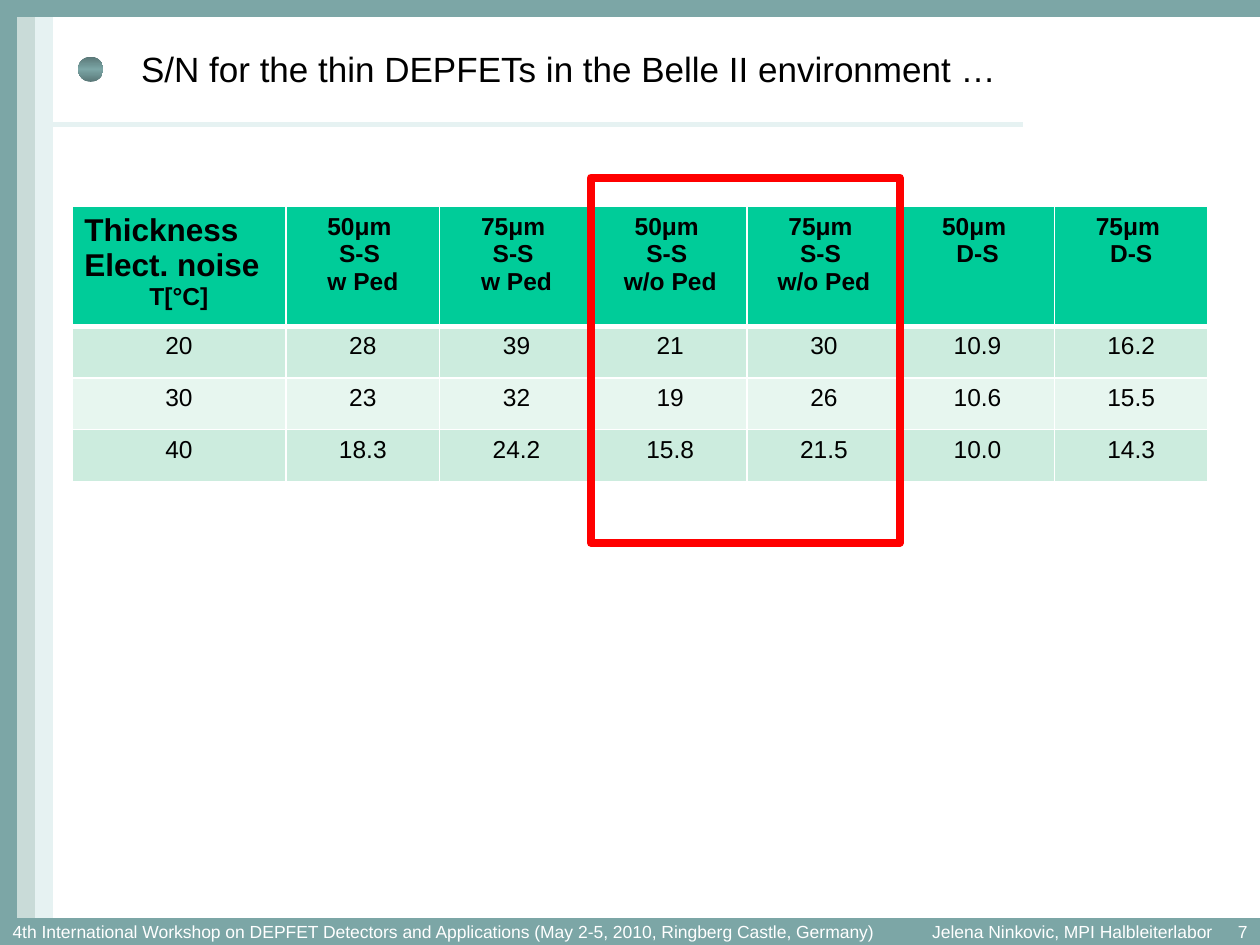
from copy import deepcopy
from typing import NamedTuple

from lxml.etree import SubElement
from pptx import Presentation
from pptx.dml.color import RGBColor
from pptx.enum.shapes import MSO_CONNECTOR, MSO_SHAPE
from pptx.enum.text import MSO_ANCHOR, PP_ALIGN
from pptx.oxml.ns import qn
from pptx.util import Inches, Pt

COLORS = {
    "teal": "7CA6A6", "teal_dark": "597777", "sage": "C9DBD8", "mist": "E6F2F2",
    "header": "00CC99", "band": "CCECDE", "band_light": "E7F6EF",
    "highlight": "FF0000", "ink": "000000", "white": "FFFFFF",
}
FONT = "Arial"
WIDTH, HEIGHT = Inches(10), Inches(7.5)
GRID_COLS, GRID_ROWS = 1000, 750  # placement grid over the whole slide


class Area(NamedTuple):
    """A place on the slide, in grid columns and rows."""
    col: int
    row: int
    cols: int
    rows: int


class Bar(NamedTuple):
    area: Area
    color: str


class Label(NamedTuple):
    area: Area
    text: str
    size: int
    color: str
    align: PP_ALIGN = PP_ALIGN.LEFT
    anchor: MSO_ANCHOR = MSO_ANCHOR.MIDDLE
    insets: tuple = (0, 0, 0, 0)  # left, top, right, bottom in grid units


class Line(NamedTuple):
    text: str
    size: int = 14
    align: PP_ALIGN = PP_ALIGN.CENTER


FRAME_BARS = [
    Bar(Area(13, 0, 15, 729), "sage"),
    Bar(Area(28, 0, 14, 750), "mist"),
    Bar(Area(0, 729, 1000, 24), "teal"),
    Bar(Area(0, 0, 13, 729), "teal"),
    Bar(Area(0, -3, 1000, 16), "teal"),
]
LABELS = [
    Label(Area(42, 21, 850, 67), "S/N for the thin DEPFETs in the Belle II environment …",
          20, "ink", insets=(70, 5, 10, 5)),
    Label(Area(10, 729, 730, 21), "4th International Workshop on DEPFET Detectors and "
          "Applications (May 2-5, 2010, Ringberg Castle, Germany)", 10, "white"),
    Label(Area(708, 729, 254, 21), "Jelena Ninkovic, MPI Halbleiterlabor",
          10, "white", PP_ALIGN.RIGHT),
    Label(Area(900, 726, 100, 24), "7", 10, "white", PP_ALIGN.RIGHT,
          MSO_ANCHOR.TOP, (10, 5, 10, 5)),
]
CORNER = [Line("Thickness", 18, PP_ALIGN.LEFT), Line("Elect. noise", 18, PP_ALIGN.LEFT),
          Line("T[°C]")]
READOUTS = ["S-S \vw Ped", "S-S \vw/o Ped", "D-S"]
SENSORS = [f"{thickness}μm \v{readout}" for readout in READOUTS for thickness in (50, 75)]
NOISE_ROWS = [
    ["20", "28", "39", "21", "30", "10.9", "16.2"],
    ["30", "23", "32", "19", "26", "10.6", "15.5"],
    ["40", "18.3", "24.2", "15.8", "21.5", "10.0", "14.3"],
]
COLUMN_COLS = [170] + [122] * len(SENSORS)
ROW_ROWS = [95] + [41] * len(NOISE_ROWS)
TABLE_AREA = Area(57, 164, sum(COLUMN_COLS), sum(ROW_ROWS))
HIGHLIGHT_AREA = Area(469, 141, 245, 290)


def x(cols: float) -> int:
    return round(WIDTH * cols / GRID_COLS)


def y(rows: float) -> int:
    return round(HEIGHT * rows / GRID_ROWS)


def place(area: Area) -> tuple:
    return x(area.col), y(area.row), x(area.cols), y(area.rows)


def rgb(color: str) -> RGBColor:
    return RGBColor.from_string(COLORS[color])


def add_outlined(slide, kind, area: Area):
    shape = slide.shapes.add_shape(kind, *place(area))
    shape.shadow.inherit = False
    return shape


def draw_bar(slide, bar: Bar) -> None:
    shape = add_outlined(slide, MSO_SHAPE.RECTANGLE, bar.area)
    shape.fill.solid()
    shape.fill.fore_color.rgb = rgb(bar.color)
    shape.line.color.rgb = rgb(bar.color)
    shape.line.width = Pt(0.75)


def draw_rule(slide) -> None:
    rule = slide.shapes.add_connector(MSO_CONNECTOR.STRAIGHT, x(32), y(99), x(812), y(99))
    rule.line.color.rgb = rgb("mist")
    rule.line.width = Pt(3)
    SubElement(rule._element.spPr, qn("a:effectLst"))


def draw_bullet(slide) -> None:
    bullet = add_outlined(slide, MSO_SHAPE.OVAL, Area(62, 45, 20, 20))
    bullet.line.fill.background()
    bullet.fill.gradient()
    bullet.fill.gradient_angle = 90
    stop_list = next(bullet._element.iter(qn("a:gsLst")))
    stop_list.insert(1, deepcopy(stop_list[0]))
    shades = [(0, "teal_dark"), (0.5, "teal"), (1, "teal_dark")]
    for stop, (position, color) in zip(bullet.fill.gradient_stops, shades):
        stop.position = position
        stop.color.rgb = rgb(color)


def add_text(paragraph, text: str, size: int, color: str, bold: bool = False) -> None:
    for index, part in enumerate(text.split("\v")):
        if index:
            paragraph.add_line_break()
        run = paragraph.add_run()
        run.text = part
        run.font.name = FONT
        run.font.size = Pt(size)
        run.font.bold = bold
        run.font.color.rgb = rgb(color)


def draw_label(slide, label: Label) -> None:
    frame = slide.shapes.add_textbox(*place(label.area)).text_frame
    frame.word_wrap = True
    frame.vertical_anchor = label.anchor
    left, top, right, bottom = label.insets
    frame.margin_left, frame.margin_right = x(left), x(right)
    frame.margin_top, frame.margin_bottom = y(top), y(bottom)
    frame.paragraphs[0].alignment = label.align
    add_text(frame.paragraphs[0], label.text, label.size, label.color)


def set_borders(cell, top: float, bottom: float) -> None:
    properties = cell._tc.get_or_add_tcPr()
    for side, points in (("L", 1), ("R", 1), ("T", top), ("B", bottom)):
        border = SubElement(properties, qn(f"a:ln{side}"), w=str(Pt(points)))
        fill = SubElement(border, qn("a:solidFill"))
        SubElement(fill, qn("a:srgbClr"), val=COLORS["white"])


def fill_cell(cell, lines: list[Line], row: int) -> None:
    set_borders(cell, top=3 if row == 1 else 1, bottom=3 if row == 0 else 1)
    cell.fill.solid()
    cell.fill.fore_color.rgb = rgb(
        "header" if row == 0 else "band" if row % 2 else "band_light")
    for index, line in enumerate(lines):
        frame = cell.text_frame
        paragraph = frame.add_paragraph() if index else frame.paragraphs[0]
        paragraph.alignment = line.align
        add_text(paragraph, line.text, line.size, "ink", bold=row == 0)


def draw_noise_table(slide) -> None:
    rows = [[CORNER] + [[Line(sensor)] for sensor in SENSORS]]
    rows += [[[Line(value)] for value in values] for values in NOISE_ROWS]
    table = slide.shapes.add_table(len(rows), len(COLUMN_COLS), *place(TABLE_AREA)).table
    table.first_row = table.horz_banding = False
    for column, cols in zip(table.columns, COLUMN_COLS):
        column.width = x(cols)
    for r, (table_row, height) in enumerate(zip(table.rows, ROW_ROWS)):
        table_row.height = y(height)
        for cell, lines in zip(table_row.cells, rows[r]):
            fill_cell(cell, lines, r)


def draw_highlight(slide) -> None:
    highlight = add_outlined(slide, MSO_SHAPE.RECTANGLE, HIGHLIGHT_AREA)
    highlight.fill.background()
    highlight.line.color.rgb = rgb("highlight")
    highlight.line.width = Pt(4.5)
    SubElement(highlight.line._get_or_add_ln(), qn("a:round"))


def main() -> None:
    deck = Presentation()
    deck.slide_width, deck.slide_height = WIDTH, HEIGHT
    slide = deck.slides.add_slide(deck.slide_layouts[6])
    # Frame and title decoration
    for bar in FRAME_BARS:
        draw_bar(slide, bar)
    draw_rule(slide)
    draw_bullet(slide)
    # Title and footer
    for label in LABELS:
        draw_label(slide, label)
    # Signal-to-noise values with the marked columns
    draw_noise_table(slide)
    draw_highlight(slide)
    deck.save("out.pptx")


if __name__ == "__main__":
    main()
